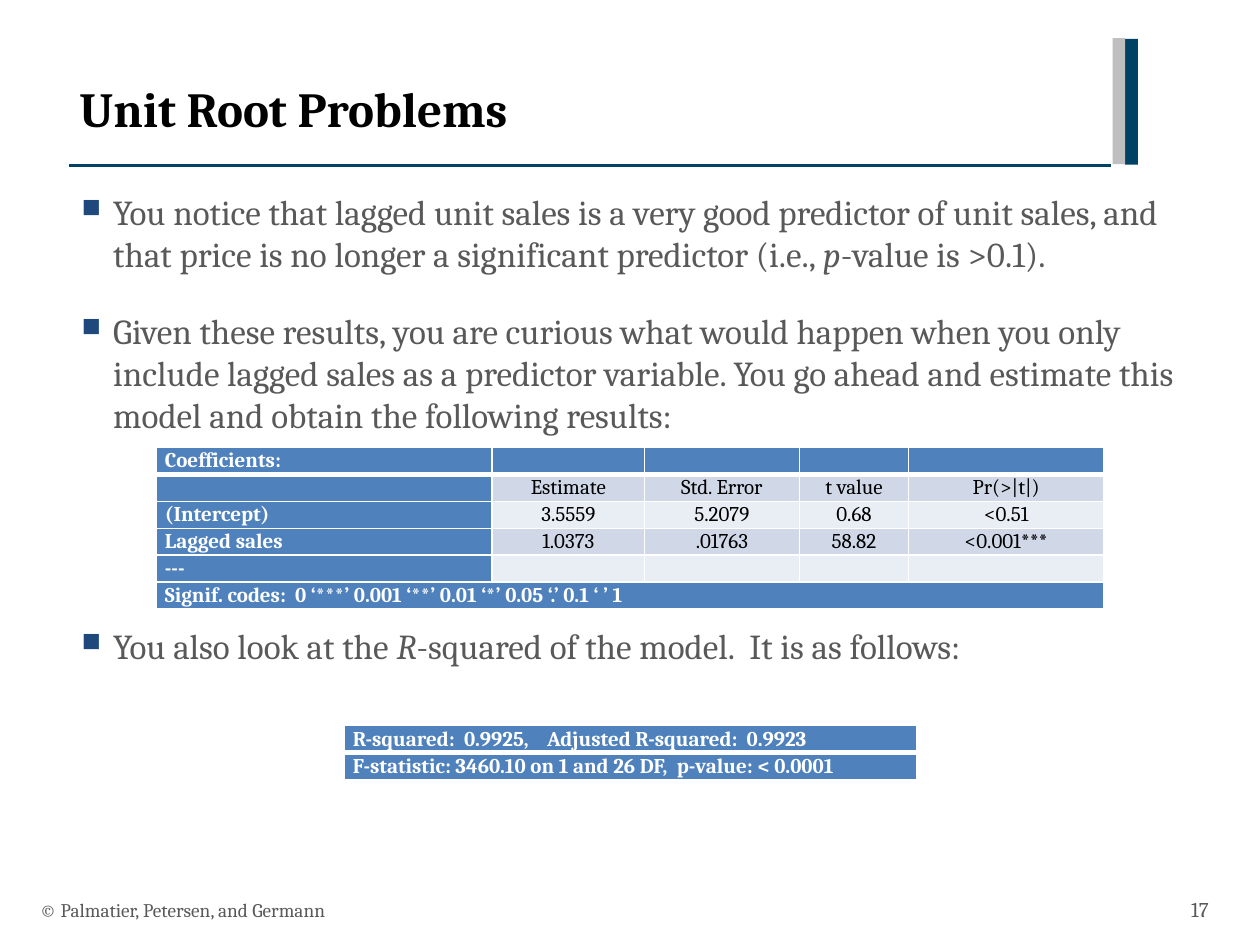
import pptx
import pptx.util
import pptx.oxml.ns
from lxml import etree
from pptx.dml.color import RGBColor
from pptx.enum.shapes import MSO_CONNECTOR, MSO_SHAPE
from pptx.enum.text import MSO_ANCHOR, MSO_AUTO_SIZE, PP_ALIGN

Pt = pptx.util.Pt
qn = pptx.oxml.ns.qn

FONT = "Cambria"
BLACK = RGBColor(0x00, 0x00, 0x00)
WHITE = RGBColor(0xFF, 0xFF, 0xFF)
NAVY = RGBColor(0x00, 0x42, 0x64)
SILVER = RGBColor(0xBF, 0xBF, 0xBF)
GREY = RGBColor(0x59, 0x59, 0x59)
BULLET = RGBColor(0x1F, 0x49, 0x7D)
BLUE = RGBColor(0x4F, 0x81, 0xBD)
BAND_DARK = RGBColor(0xD0, 0xD8, 0xE8)
BAND_LIGHT = RGBColor(0xE9, 0xED, 0xF4)

# Content
TITLE = "Unit Root Problems"
# Space before, then spans of (text, italic)
BULLETS = [
    (0, [("You notice that lagged unit sales is a very good predictor of unit sales, "
          "and that price is no longer a significant predictor (i.e., ", False),
         ("p", True), ("-value is >0.1).", False)]),
    (20, [("Given these results, you are curious what would happen when you only "
           "include lagged sales as a predictor variable. You go ahead and estimate "
           "this model and obtain the following results:", False)]),
    (108, [("You also look at the ", False), ("R", True),
           ("-squared of the model.  It is as follows:", False)]),
]
COEFFICIENTS = [
    ["Coefficients:", "", "", "", ""],
    ["", "Estimate", "Std. Error", "t value", "Pr(>|t|)"],
    ["(Intercept)", "3.5559", "5.2079", "0.68", "<0.51"],
    ["Lagged sales", "1.0373", ".01763", "58.82", "<0.001***"],
    ["---", "", "", "", ""],
    ["Signif. codes:  0 ‘***’ 0.001 ‘**’ 0.01 ‘*’ 0.05 ‘.’ 0.1 ‘ ’ 1", "", "", "", ""],
]
COEFFICIENT_WIDTHS = [192, 87, 88.5, 62.5, 111.5]
FIT = [
    ["R-squared:  0.9925,\tAdjusted R-squared:  0.9923"],
    ["F-statistic: 3460.10 on 1 and 26 DF,  p-value: < 0.0001"],
]
FIT_WIDTHS = [327]
FIT_TAB = 111
ROW_HEIGHT = 14.6


def style(para, size, color, bold=False, align=PP_ALIGN.LEFT):
    para.alignment = align
    font = para.font
    font.name, font.size, font.bold = FONT, Pt(size), bold
    font.color.rgb = color


def add_element(parent, tag, **attributes):
    return etree.SubElement(parent, qn(tag), attributes)


def add_box(page, left, top, width, height, anchor):
    frame = page.shapes.add_textbox(Pt(left), Pt(top), Pt(width), Pt(height)).text_frame
    frame.word_wrap = True
    frame.vertical_anchor = anchor
    return frame


def add_bar(page, left, top, color):
    bar = page.shapes.add_shape(MSO_SHAPE.RECTANGLE, Pt(left), Pt(top), Pt(7.2), Pt(72))
    bar.shadow.inherit = False
    bar.fill.solid()
    bar.fill.fore_color.rgb = color
    bar.line.fill.background()


def add_bullet(para):
    properties = para._p.get_or_add_pPr()
    properties.set("marL", str(Pt(18)))
    properties.set("indent", str(-Pt(18)))
    add_element(add_element(properties, "a:buClr"), "a:srgbClr", val=str(BULLET))
    add_element(properties, "a:buSzPct", val="75000")
    add_element(properties, "a:buChar", char="■")


def add_borders(cell, row):
    properties = cell._tc.get_or_add_tcPr()
    widths = {"L": 1, "R": 1, "T": 3 if row == 1 else 1, "B": 3 if row == 0 else 1}
    for side, width in widths.items():
        line = add_element(properties, "a:ln" + side, w=str(Pt(width)))
        add_element(add_element(line, "a:solidFill"), "a:srgbClr", val=str(WHITE))


def fill_cell(cell, text, row, is_head, color):
    add_borders(cell, row)
    cell.fill.solid()
    cell.fill.fore_color.rgb = color
    cell.margin_left = cell.margin_right = Pt(5)
    cell.margin_top = cell.margin_bottom = 0
    para = cell.text_frame.paragraphs[0]
    if "\t" in text:
        tabs = add_element(para._p.get_or_add_pPr(), "a:tabLst")
        add_element(tabs, "a:tab", pos=str(Pt(FIT_TAB)), algn="l")
    if is_head:
        style(para, 12, WHITE, True)
    else:
        style(para, 12, BLACK, align=PP_ALIGN.CENTER)
    para.line_spacing = 1.07
    if text:
        para.add_run().text = text
    else:
        # An empty cell keeps the row low only with a small end mark
        add_element(para._p, "a:endParaRPr", sz="1200")


def add_grid(page, left, top, rows, widths, head_rows):
    table = page.shapes.add_table(len(rows), len(widths), Pt(left), Pt(top),
                                  Pt(sum(widths)), Pt(ROW_HEIGHT * len(rows))).table
    table.first_row = table.horz_banding = False
    for column, width in zip(table.columns, widths):
        column.width = Pt(width)
    for r, texts in enumerate(rows):
        table.rows[r].height = Pt(ROW_HEIGHT)
        for c, text in enumerate(texts):
            is_head = c == 0 or r in head_rows
            band = BAND_DARK if r % 2 else BAND_LIGHT
            fill_cell(table.cell(r, c), text, r, is_head, BLUE if is_head else band)
    return table


def main():
    deck = pptx.Presentation()
    deck.slide_width, deck.slide_height = Pt(720), Pt(540)
    page = deck.slides.add_slide(deck.slide_layouts[5])

    # Rule and corner bars
    rule = page.shapes.add_connector(MSO_CONNECTOR.STRAIGHT, Pt(39.6), Pt(94.5),
                                     Pt(635), Pt(94.5))
    rule.line.color.rgb = NAVY
    rule.line.width = Pt(2)
    add_element(rule._element.spPr, "a:effectLst")
    add_bar(page, 643, 22.2, NAVY)
    add_bar(page, 635.8, 21.8, SILVER)

    # Title
    title = page.shapes.title
    title.left, title.top, title.width, title.height = Pt(38.2), Pt(41), Pt(595), Pt(63.4)
    title.text_frame.text = TITLE
    title.text_frame.auto_size = MSO_AUTO_SIZE.NONE
    title.text_frame.vertical_anchor = MSO_ANCHOR.TOP
    style(title.text_frame.paragraphs[0], 28, BLACK, True)

    # Bulleted text
    body = add_box(page, 39.6, 105.1, 658, 389.5, MSO_ANCHOR.TOP)
    for number, (space, spans) in enumerate(BULLETS):
        para = body.add_paragraph() if number else body.paragraphs[0]
        add_bullet(para)
        para.space_before = Pt(space)
        style(para, 20, GREY)
        for text, italic in spans:
            span = para.add_run()
            span.text = text
            if italic:
                span.font.italic = True

    # Result tables
    last = len(COEFFICIENTS) - 1
    coefficients = add_grid(page, 89.3, 255.6, COEFFICIENTS, COEFFICIENT_WIDTHS, (0, last))
    coefficients.cell(last, 0).merge(coefficients.cell(last, len(COEFFICIENT_WIDTHS) - 1))
    add_grid(page, 196.6, 414.7, FIT, FIT_WIDTHS, (0, 1))

    # Footer and page number
    for left, width, text, size, align in [
        (15.8, 482.4, "© Palmatier, Petersen, and Germann", 11, PP_ALIGN.LEFT),
        (653.8, 43.9, "17", 12, PP_ALIGN.RIGHT),
    ]:
        frame = add_box(page, left, 505.4, width, 28.8, MSO_ANCHOR.MIDDLE)
        frame.text = text
        style(frame.paragraphs[0], size, GREY, align=align)

    deck.save("out.pptx")


if __name__ == "__main__":
    main()
